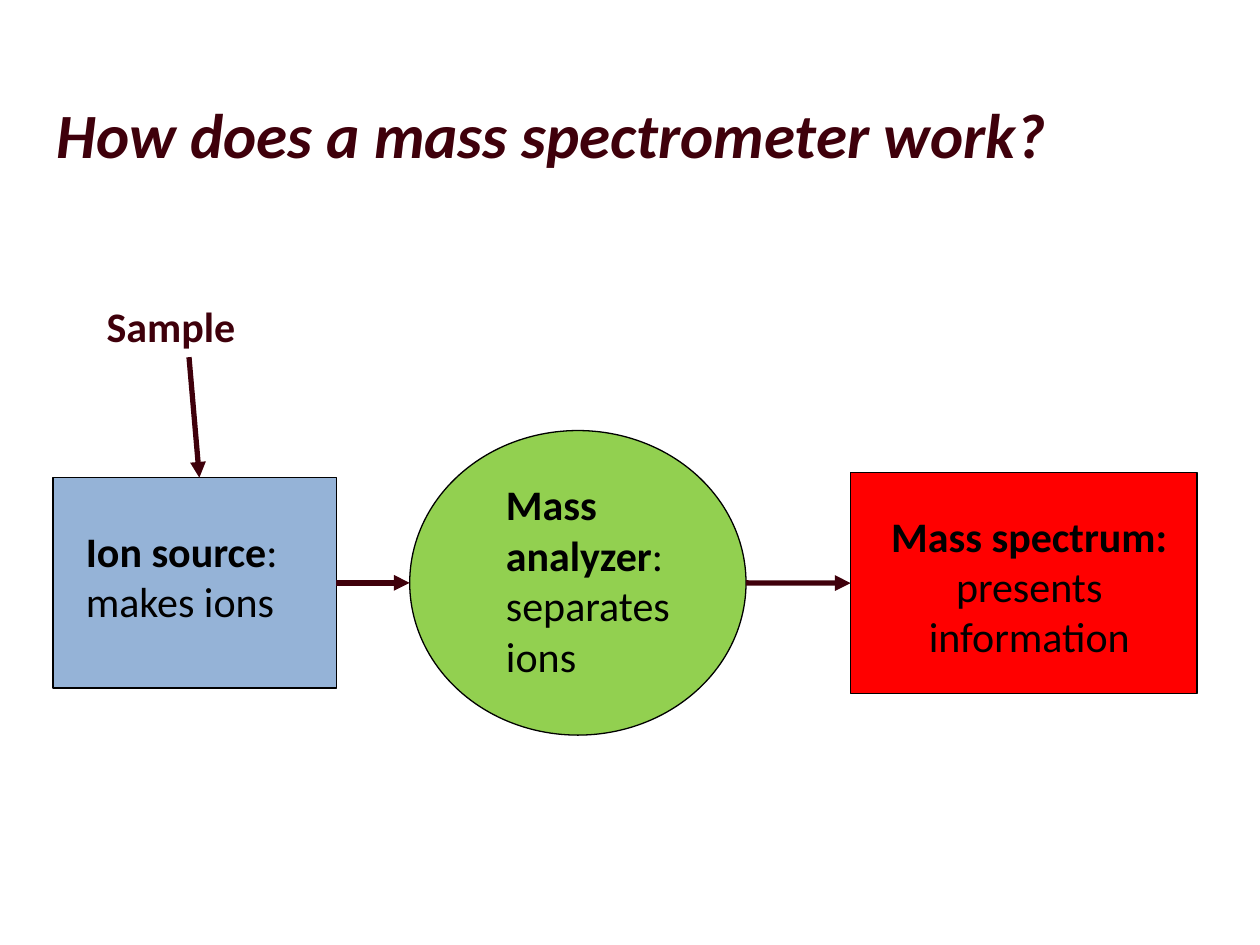
from dataclasses import dataclass

import pptx
import pptx.dml.color
import pptx.enum.shapes
import pptx.enum.text
import pptx.oxml
import pptx.oxml.ns
import pptx.util

Cm = pptx.util.Cm
Pt = pptx.util.Pt
Shape = pptx.enum.shapes.MSO_SHAPE
Align = pptx.enum.text.PP_ALIGN


@dataclass(frozen=True)
class Theme:
    font: str = "Calibri"
    dark: str = "3F000B"
    black: str = "000000"
    blue: str = "95B3D7"
    green: str = "92D050"
    red: str = "FF0000"
    title: int = 36
    body: int = 24
    edge: float = 0.75
    arrow: int = 3


@dataclass(frozen=True)
class Box:
    left: float
    top: float
    width: float
    height: float

    def size(self) -> tuple:
        return Cm(self.left), Cm(self.top), Cm(self.width), Cm(self.height)


@dataclass(frozen=True)
class Label:
    box: Box
    bold: str
    plain: str = ""
    color: str = Theme.black
    size: int = Theme.body
    italic: bool = False
    align: Align = Align.LEFT
    fill: str = ""


@dataclass(frozen=True)
class Stage:
    kind: Shape
    box: Box
    fill: str
    label: Label


THEME = Theme()
TITLE = Label(Box(0.89, 1.8, 24.33, 1.78), "How does a mass spectrometer work?",
              color=THEME.dark, size=THEME.title, italic=True)
SAMPLE = Label(Box(1.9, 5.93, 5.29, 1.27), "Sample", color=THEME.dark)
STAGES = [
    Stage(Shape.RECTANGLE, Box(1.07, 9.63, 5.71, 4.24), THEME.blue,
          Label(Box(1.48, 10.46, 5.29, 2.29), "Ion source", ":\vmakes ions",
                fill=THEME.blue)),
    Stage(Shape.OVAL, Box(8.26, 8.68, 6.78, 6.14), THEME.green,
          Label(Box(9.95, 9.53, 4.66, 4.32), "Mass analyzer", ": separates ions")),
    Stage(Shape.RECTANGLE, Box(17.15, 9.53, 6.98, 4.45), THEME.red,
          Label(Box(17.15, 10.16, 7.2, 3.3), "Mass spectrum:\v",
                "presents information", align=Align.CENTER)),
]


def paint(fill, color: str) -> None:
    fill.solid()
    fill.fore_color.rgb = pptx.dml.color.RGBColor.from_string(color)


def write(slide, label: Label) -> None:
    area = slide.shapes.add_textbox(*label.box.size())
    if label.fill:
        paint(area.fill, label.fill)
    frame = area.text_frame
    frame.word_wrap = True
    frame.text = label.bold
    para = frame.paragraphs[0]
    para.alignment = label.align
    heads = len(para.runs)
    for row, text in enumerate(label.plain.split("\v") if label.plain else []):
        if row:
            para.add_line_break()
        para.add_run().text = text
    for index, run in enumerate(para.runs):
        run.font.name = THEME.font
        run.font.size = Pt(label.size)
        run.font.bold = index < heads
        run.font.italic = label.italic
        paint(run.font.fill, label.color)


def draw(slide, stage: Stage):
    shape = slide.shapes.add_shape(stage.kind, *stage.box.size())
    shape.shadow.inherit = False
    paint(shape.fill, stage.fill)
    paint(shape.line.fill, THEME.black)
    shape.line.width = Pt(THEME.edge)
    write(slide, stage.label)
    return shape


def point(slide, start: tuple, end: tuple):
    arrow = slide.shapes.add_connector(
        pptx.enum.shapes.MSO_CONNECTOR.STRAIGHT, *map(Cm, start + end))
    paint(arrow.line.fill, THEME.dark)
    arrow.line.width = Pt(THEME.arrow)
    space = pptx.oxml.ns.nsdecls("a")
    arrow.line._get_or_add_ln().append(
        pptx.oxml.parse_xml(f'<a:tailEnd {space} type="triangle"/>'))
    arrow._element.spPr.append(pptx.oxml.parse_xml(f"<a:effectLst {space}/>"))
    return arrow


def main() -> None:
    deck = pptx.Presentation()
    deck.slide_width, deck.slide_height = Cm(25.4), Cm(19.05)
    slide = deck.slides.add_slide(deck.slide_layouts[6])
    write(slide, TITLE)
    shapes = [draw(slide, stage) for stage in STAGES]
    level = STAGES[0].box.top + STAGES[0].box.height / 2
    for index in range(len(STAGES) - 1):
        near, far = STAGES[index].box, STAGES[index + 1].box
        arrow = point(slide, (near.left + near.width, level), (far.left, level))
        if STAGES[index].kind == Shape.RECTANGLE:
            arrow.begin_connect(shapes[index], 3)
        if STAGES[index + 1].kind == Shape.RECTANGLE:
            arrow.end_connect(shapes[index + 1], 1)
    write(slide, SAMPLE)
    point(slide, (3.81, 7.2), (4.02, 9.63))
    deck.save("out.pptx")


if __name__ == "__main__":
    main()
